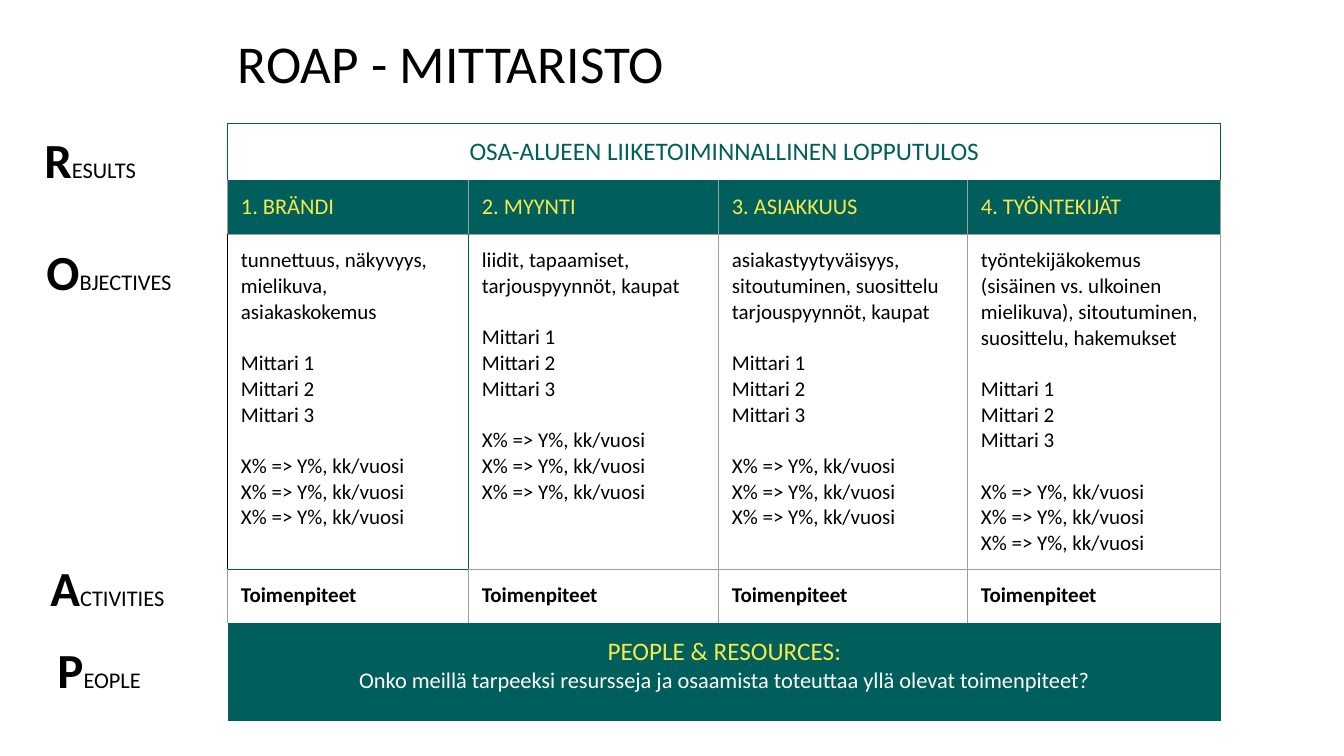
from lxml import etree
from pptx import Presentation
from pptx import util as u
from pptx.dml.color import RGBColor
from pptx.enum import text
from pptx.oxml.ns import qn

TEAL = RGBColor(0x00, 0x5E, 0x5D)
YELLOW = RGBColor(0xF7, 0xEA, 0x48)
GREY = RGBColor(0x9E, 0x9E, 0x9E)
BLACK = RGBColor(0x00, 0x00, 0x00)
WHITE = RGBColor(0xFF, 0xFF, 0xFF)

FONT = "Calibri"
INSET = u.Inches(0.13)
SIDES = "LRTB"
COL_WIDTHS = [2.39, 2.48, 2.47, 2.51]
ROW_HEIGHTS = [0.57, 0.54, 3.32, 0.53, 0.97]
METERS = ["Mittari 1", "Mittari 2", "Mittari 3"]
TARGETS = ["X% => Y%, kk/vuosi"] * 3
AREAS = [
    ("1. BRÄNDI", ["tunnettuus, näkyvyys, mielikuva, asiakaskokemus"]),
    ("2. MYYNTI", ["liidit, tapaamiset, tarjouspyynnöt, kaupat"]),
    ("3. ASIAKKUUS", ["asiakastyytyväisyys, sitoutuminen, suosittelu",
                      "tarjouspyynnöt, kaupat"]),
    ("4. TYÖNTEKIJÄT", ["työntekijäkokemus (sisäinen vs. ulkoinen mielikuva), "
                        "sitoutuminen, suosittelu, hakemukset"]),
]
LABELS = [
    ("RESULTS", 0.31, 1.16, 1.5),
    ("OBJECTIVES", 0.33, 2.27, 1.9),
    ("ACTIVITIES", 0.37, 5.4, 1.84),
    ("PEOPLE", 0.44, 6.21, 1.72),
]


def add_run(p, txt, size, color=BLACK, bold=False):
    r = p.add_run()
    r.text = txt
    r.font.name = FONT
    r.font.size = u.Pt(size)
    r.font.bold = bold
    r.font.color.rgb = color
    return r


def next_paragraph(tf):
    p = tf.paragraphs[0]
    return tf.add_paragraph() if p.runs else p


def set_insets(box):
    box.margin_left = box.margin_right = INSET
    box.margin_top = box.margin_bottom = INSET
    box.vertical_anchor = text.MSO_ANCHOR.TOP


def style_cell(cell, fill, borders):
    set_insets(cell)
    cell.fill.solid()
    cell.fill.fore_color.rgb = fill
    tc_pr = cell._tc.get_or_add_tcPr()
    for i, side in enumerate(SIDES):
        ln = etree.Element(qn(f"a:ln{side}"), w=str(u.Pt(0.75)))
        color = borders.get(side)
        if color is None:
            etree.SubElement(ln, qn("a:noFill"))
        else:
            solid = etree.SubElement(ln, qn("a:solidFill"))
            etree.SubElement(solid, qn("a:srgbClr"), val=str(color))
        tc_pr.insert(i, ln)


def add_title(slide, left, top, width, height):
    sp = slide.shapes.title
    sp.left, sp.top, sp.width, sp.height = map(u.Inches, (left, top, width, height))
    tf = sp.text_frame
    set_insets(tf)
    tf.word_wrap = True
    tf.auto_size = text.MSO_AUTO_SIZE.NONE
    p = tf.paragraphs[0]
    p.alignment = text.PP_ALIGN.LEFT
    add_run(p, "ROAP - MITTARISTO", 38)


def add_label(slide, word, left, top, width):
    sp = slide.shapes.add_textbox(*map(u.Inches, (left, top, width, 0.86)))
    tf = sp.text_frame
    set_insets(tf)
    tf.word_wrap = True
    p = tf.paragraphs[0]
    add_run(p, word[0], 35, bold=True)
    add_run(p, word[1:], 16)


def fill_area(table, col, name, goals):
    add_run(table.cell(1, col).text_frame.paragraphs[0], name, 16, YELLOW)
    tf = table.cell(2, col).text_frame
    for group in (goals, METERS, TARGETS):
        for i, line in enumerate(group):
            p = next_paragraph(tf)
            if i == 0 and group is not goals:
                p.space_before = u.Pt(18.3)
            add_run(p, line, 15)
    add_run(table.cell(3, col).text_frame.paragraphs[0], "Toimenpiteet", 15, bold=True)


def fill_banner(table, row, lines):
    table.cell(row, 0).merge(table.cell(row, len(COL_WIDTHS) - 1))
    tf = table.cell(row, 0).text_frame
    for line, size, color in lines:
        p = next_paragraph(tf)
        p.alignment = text.PP_ALIGN.CENTER
        add_run(p, line, size, color)


def add_metrics_table(slide, left, top):
    box = (left, top, sum(COL_WIDTHS), sum(ROW_HEIGHTS))
    frame = slide.shapes.add_table(len(ROW_HEIGHTS), len(COL_WIDTHS), *map(u.Inches, box))
    table = frame.table
    table.first_row = table.horz_banding = False
    for col, width in zip(table.columns, COL_WIDTHS):
        col.width = u.Inches(width)
    for row, height in zip(table.rows, ROW_HEIGHTS):
        row.height = u.Inches(height)

    grey = dict.fromkeys(SIDES, GREY)
    teal = dict.fromkeys(SIDES, TEAL)
    row_styles = [
        (WHITE, teal),
        (TEAL, {**grey, "T": TEAL}),
        (WHITE, grey),
        (WHITE, {**grey, "B": None}),
        (TEAL, {}),
    ]
    for r, (fill, borders) in enumerate(row_styles):
        for c in range(len(COL_WIDTHS)):
            cell_borders = dict(borders)
            if (r, c) == (2, 0):
                cell_borders.update(L=BLACK, R=TEAL, B=TEAL)
            elif (r, c) == (2, 1):
                cell_borders["L"] = TEAL
            elif (r, c) == (3, 0):
                cell_borders["T"] = TEAL
            style_cell(table.cell(r, c), fill, cell_borders)

    fill_banner(table, 0, [("OSA-ALUEEN LIIKETOIMINNALLINEN LOPPUTULOS", 18, TEAL)])
    for c, (name, goals) in enumerate(AREAS):
        fill_area(table, c, name, goals)
    fill_banner(table, 4, [
        ("PEOPLE & RESOURCES:", 18, YELLOW),
        ("Onko meillä tarpeeksi resursseja ja osaamista toteuttaa "
         "yllä olevat toimenpiteet?", 16, WHITE),
    ])


def main():
    prs = Presentation()
    prs.slide_width, prs.slide_height = u.Inches(13.33), u.Inches(7.5)
    slide = prs.slides.add_slide(prs.slide_layouts[5])
    add_title(slide, 2.23, 0.17, 10.95, 0.83)
    add_metrics_table(slide, 2.26, 1.22)
    for label in LABELS:
        add_label(slide, *label)
    prs.save("out.pptx")


if __name__ == "__main__":
    main()
